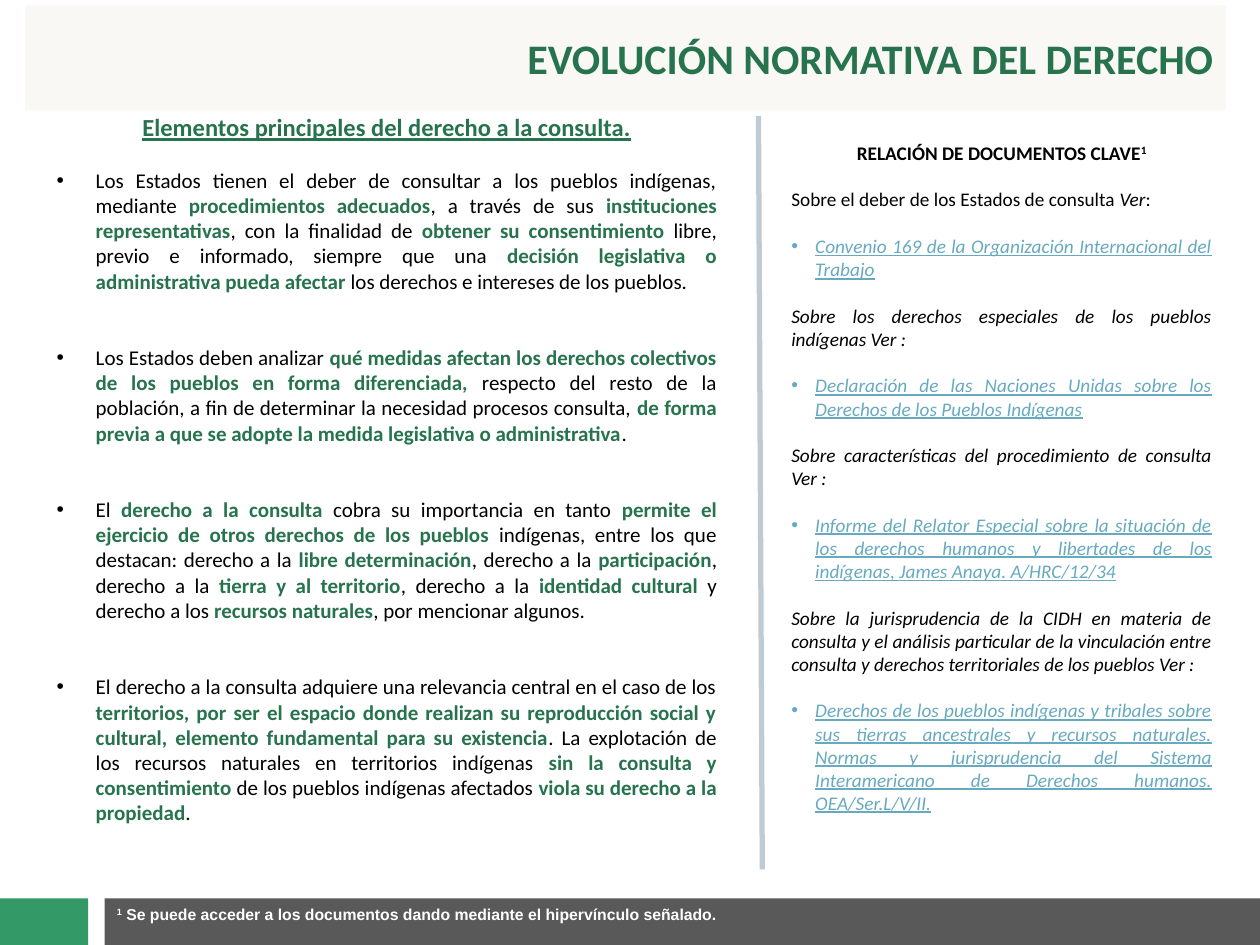
from lxml import etree
from pptx import Presentation
from pptx import util as u
from pptx.dml.color import RGBColor
from pptx.enum import shapes, text
from pptx.oxml.ns import qn


class Theme:
    font, foot_font = "Calibri", "Arial"
    black, white = RGBColor(0, 0, 0), RGBColor(255, 255, 255)
    green = RGBColor(0x26, 0x73, 0x4D)
    block = RGBColor(0x33, 0x99, 0x66)
    gray = RGBColor(0x59, 0x59, 0x59)
    cream = RGBColor(0xF9, 0xF8, 0xF5)
    link = RGBColor(0x67, 0xAA, 0xBF)
    rule = RGBColor(0xBE, 0xCB, 0xD5)
    title, head, body, side, foot = 24, 14, 12, 11, 9


def put(par, words, size, color, face=Theme.font, bold=False, italic=False, line=False, base=0):
    """Add one formatted run; base raises it, in percent."""
    run = par.add_run()
    run.text = words
    font = run.font
    font.name, font.size, font.color.rgb = face, u.Pt(size), color
    font.bold, font.italic, font.underline = bold, italic, line
    if base:
        run._r.get_or_add_rPr().set("baseline", str(base * 1000))


def setup(par, align, gap=0, indent=0):
    """Set alignment and space before; an indent also gives a bullet."""
    par.alignment = align
    par.space_before = u.Pt(gap)
    props = par._p.get_or_add_pPr()
    props.set("marL", str(u.Inches(indent)))
    props.set("indent", str(-u.Inches(indent)))
    if indent:
        etree.SubElement(props, qn("a:buChar")).set("char", "•")
    else:
        etree.SubElement(props, qn("a:buNone"))


CENTER, RIGHT, JUST = text.PP_ALIGN.CENTER, text.PP_ALIGN.RIGHT, text.PP_ALIGN.JUSTIFY

deck = Presentation()
deck.slide_width, deck.slide_height = u.Inches(10), u.Inches(7.5)
slide = deck.slides.add_slide(deck.slide_layouts[3])
title, main, side = slide.placeholders

# Place the three text areas
areas = [
    (title, 0.2, 0.21, 9.53, 0.5),
    (main, 0.35, 0.84, 5.44, 5.79),
    (side, 6.18, 1.07, 3.54, 5.65),
]
for area, left, top, width, height in areas:
    area.left, area.top = u.Inches(left), u.Inches(top)
    area.width, area.height = u.Inches(width), u.Inches(height)
    area.text_frame.word_wrap = True
    area.text_frame.auto_size = text.MSO_AUTO_SIZE.SHAPE_TO_FIT_TEXT

title.fill.solid()
title.fill.fore_color.rgb = Theme.cream
par = title.text_frame.paragraphs[0]
setup(par, RIGHT)
put(par, "EVOLUCIÓN NORMATIVA DEL DERECHO", Theme.title, Theme.green, bold=True)

# Main list: words between asterisks are stressed
points = [
    "Los Estados tienen el deber de consultar a los pueblos indígenas, mediante "
    "*procedimientos adecuados*, a través de sus *instituciones representativas*, "
    "con la finalidad de *obtener su consentimiento *libre, previo e informado, "
    "siempre que una *decisión legislativa o administrativa pueda afectar* "
    "los derechos e intereses de los pueblos. ",
    "Los Estados deben analizar *qué medidas afectan los derechos colectivos de los "
    "pueblos en forma diferenciada,* respecto del resto de la población, a fin de "
    "determinar la necesidad procesos consulta, *de forma previa a que se adopte la "
    "medida legislativa o administrativa*.",
    "El *derecho a la consulta *cobra su importancia en tanto *permite el ejercicio de "
    "otros derechos de los pueblos *indígenas, entre los que destacan: derecho a la "
    "*libre determinación*, derecho a la *participación*, derecho a la *tierra y al "
    "territorio*, derecho a la *identidad cultural *y derecho a los *recursos "
    "naturales*, por mencionar algunos.",
    "El derecho a la consulta adquiere una relevancia central en el caso de los "
    "*territorios, por ser el espacio donde realizan su reproducción social y cultural, "
    "elemento fundamental para su existencia*. La explotación de los recursos naturales "
    "en territorios indígenas *sin la consulta y consentimiento *de los pueblos indígenas "
    "afectados *viola su derecho a la propiedad*.",
]
frame = main.text_frame
par = frame.paragraphs[0]
setup(par, CENTER)
put(par, "Elementos principales del derecho a la consulta.",
    Theme.head, Theme.green, bold=True, line=True)
for row, point in enumerate(points):
    par = frame.add_paragraph()
    setup(par, JUST, 29.3 if row else 14.65, 0.31)
    for part, words in enumerate(point.split("*")):
        stress = part % 2 == 1
        put(par, words, Theme.body, Theme.green if stress else Theme.black, bold=stress)

# Side list: each topic holds its runs as (words, italic), then its document
topics = [
    ([("Sobre el deber de los Estados de consulta ", False), ("Ver", True), (":", False)],
     "Convenio 169 de la Organización Internacional del Trabajo"),
    ([("Sobre los derechos especiales de los pueblos indígenas Ver :", True)],
     "Declaración de las Naciones Unidas sobre los Derechos de los Pueblos Indígenas"),
    ([("Sobre características del procedimiento de consulta Ver :", True)],
     "Informe del Relator Especial sobre la situación de los derechos humanos y "
     "libertades de los indígenas, James Anaya. A/HRC/12/34"),
    ([("Sobre la jurisprudencia de la CIDH en materia de consulta y el análisis particular "
       "de la vinculación entre consulta y derechos territoriales de los pueblos Ver :", True)],
     "Derechos de los pueblos indígenas y tribales sobre sus tierras ancestrales y "
     "recursos naturales. Normas y jurisprudencia del Sistema Interamericano de Derechos "
     "humanos. OEA/Ser.L/V/II."),
]
gap = 13.4
frame = side.text_frame
par = frame.paragraphs[0]
setup(par, CENTER)
put(par, "RELACIÓN DE DOCUMENTOS CLAVE", Theme.side, Theme.black, bold=True)
put(par, "1", Theme.side, Theme.black, bold=True, base=30)
for topic, source in topics:
    par = frame.add_paragraph()
    setup(par, JUST, gap)
    for words, slant in topic:
        put(par, words, Theme.side, Theme.black, italic=slant)
    par = frame.add_paragraph()
    setup(par, JUST, gap, 0.19)
    put(par, source, Theme.side, Theme.link, italic=True, line=True)

# Footer bars; the wide one, drawn last, holds the note
bars = [(-0.01, 0.71, 0.37, Theme.block), (0.83, 9.21, 0.4, Theme.gray)]
for left, width, height, color in bars:
    bar = slide.shapes.add_shape(shapes.MSO_SHAPE.RECTANGLE, u.Inches(left),
                                 u.Inches(7.13), u.Inches(width), u.Inches(height))
    bar.shadow.inherit = False
    bar.fill.solid()
    bar.fill.fore_color.rgb = color
    bar.line.fill.background()
bar.text_frame.word_wrap = True
bar.text_frame.vertical_anchor = text.MSO_ANCHOR.TOP
par = bar.text_frame.paragraphs[0]
par.alignment = text.PP_ALIGN.LEFT
put(par, "1", Theme.foot, Theme.white, Theme.foot_font, bold=True, base=30)
put(par, " Se puede acceder a los documentos dando mediante el hipervínculo señalado.",
    Theme.foot, Theme.white, Theme.foot_font, bold=True)

# Column divider
rule = slide.shapes.add_connector(shapes.MSO_CONNECTOR.STRAIGHT, u.Inches(6.02),
                                  u.Inches(0.92), u.Inches(6.05), u.Inches(6.9))
rule.line.color.rgb = Theme.rule
rule.line.width = u.Pt(3)
etree.SubElement(rule._element.spPr, qn("a:effectLst"))

deck.save("out.pptx")
